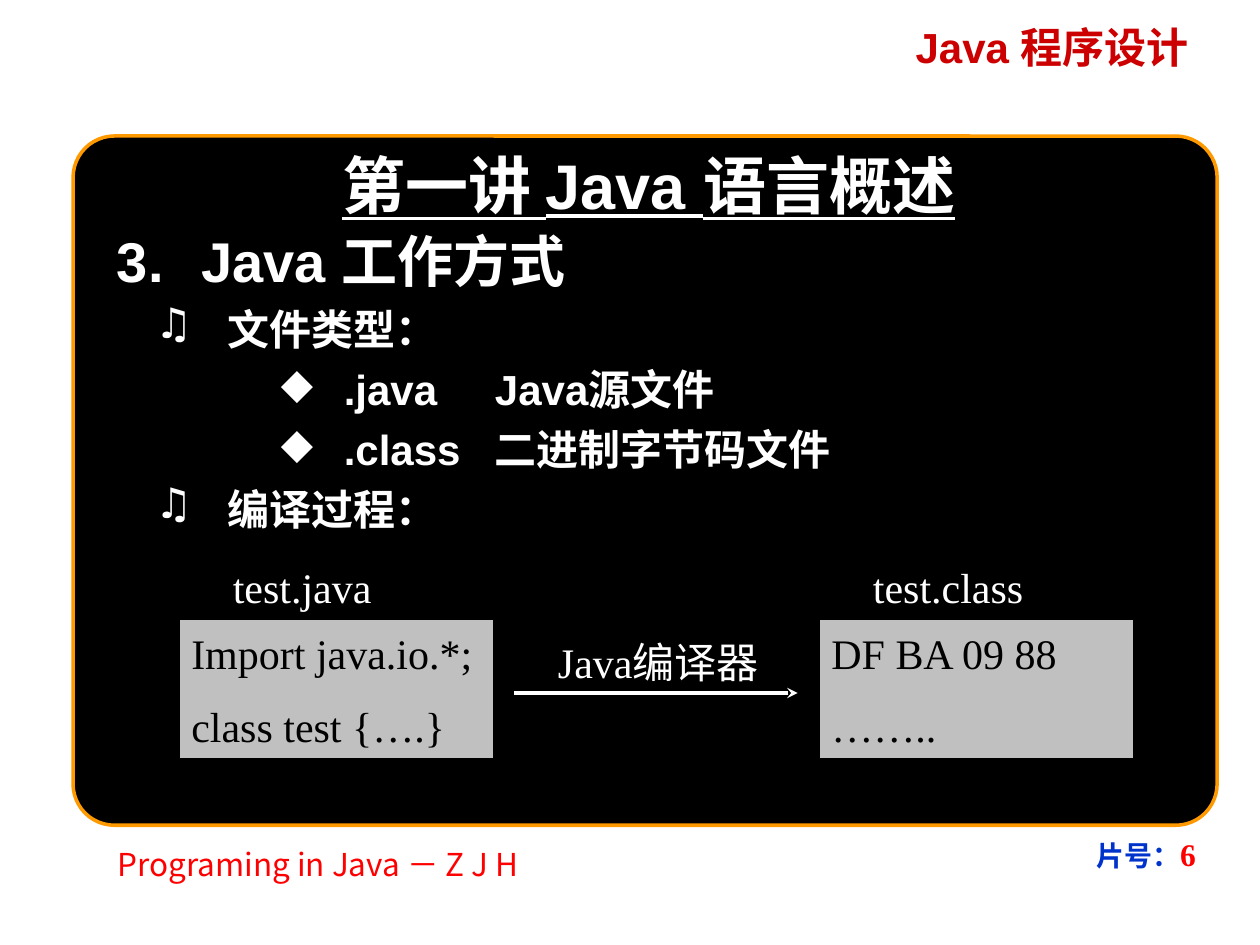
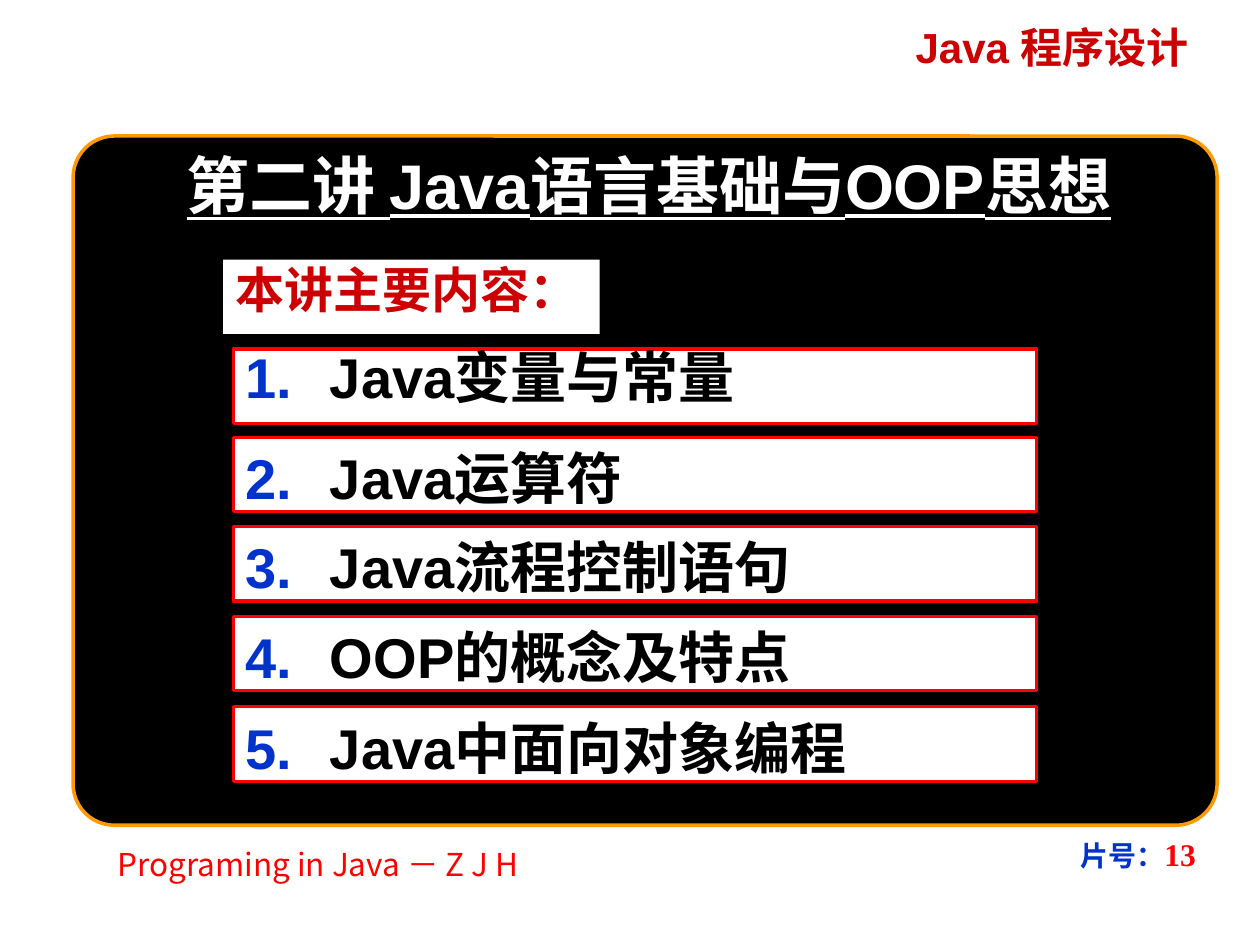
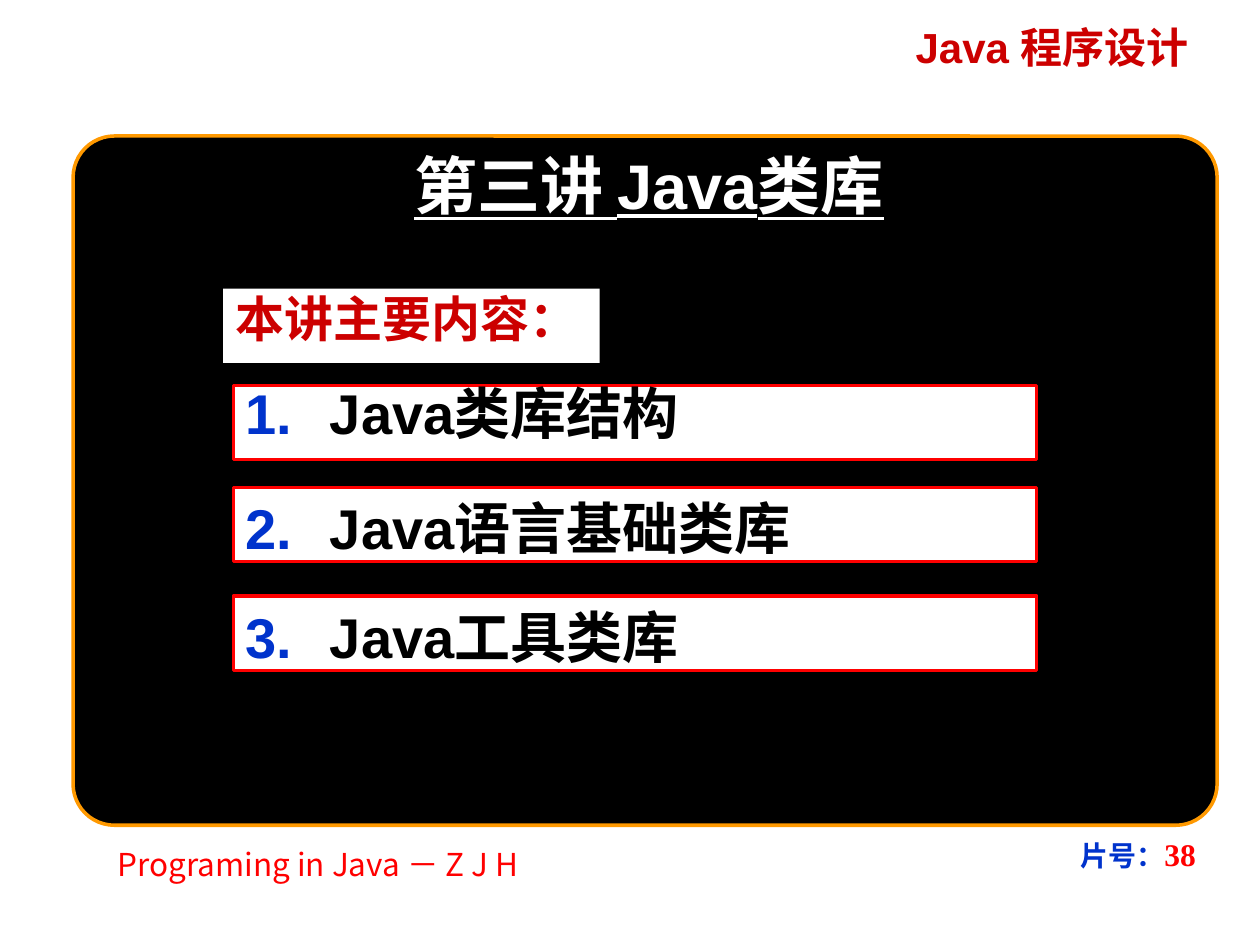
from pptx import Presentation
from pptx.dml.color import RGBColor
from pptx.enum import shapes as sh, text as tx
from pptx.oxml import ns, xmlchemy as xc
from pptx.util import Inches, Pt

# Colours, fonts and text formats
HUES = dict(white="FFFFFF", black="000000", red="FF0000", dark="CC0000",
            blue="0033CC", gold="FF9900", grey="C0C0C0")
HAN, SANS, SERIF = "Noto Sans CJK SC", "Arial", "Times New Roman"
STYLE = {
    "head": dict(size=24, name=SANS, hue="dark", bold=True),
    "foot": dict(size=18, name=HAN, hue="red"),
    "page": dict(size=16, name=SERIF, hue="blue", bold=True),
    "num": dict(size=18, name=SERIF, hue="red", bold=True),
    "title": dict(size=36, name=SANS, hue="white", bold=True, underline=True),
    "lead": dict(size=28, name=SANS, hue="dark", bold=True),
    "item": dict(size=32, name=SANS, hue="black", bold=True),
    "topic": dict(size=32, name=SANS, hue="white", bold=True),
    "point": dict(size=24, name=SANS, hue="white", bold=True),
    "code": dict(size=24, name=SERIF, hue="black"),
    "label": dict(size=24, name=SERIF, hue="white"),
}

# Content: style, text, bullet, left margin, hanging indent
WORK = [
    ("topic", "Java 工作方式", 3, 0.67, 0.67),
    ("point", "文件类型：", "♫", 0.88, 0.58),
    ("point", ".java\tJava源文件", "◆", 1.8, 0.5),
    ("point", ".class\t二进制字节码文件", "◆", 1.8, 0.5),
    ("point", "编译过程：", "♫", 0.88, 0.58),
]
# Label, label left, label width, box left, lines
FILES = [
    ("test.java", 1.75, 2, 1.42, ["Import java.io.*;", "class test {….}"]),
    ("test.class", 6.83, 2.75, 6.5, ["DF BA 09 88", "…….."]),
]
# Title, page, top of lead, items with their tops
PLANS = [
    ("第二讲 Java语言基础与OOP思想", 13, 2.06,
     [("Java变量与常量", 2.77), ("Java运算符", 3.47), ("Java流程控制语句", 4.18),
      ("OOP的概念及特点", 4.89), ("Java中面向对象编程", 5.61)]),
    ("第三讲 Java类库", 38, 2.29,
     [("Java类库结构", 3.06), ("Java语言基础类库", 3.87), ("Java工具类库", 4.73)]),
]


def rgb(hue):
    return RGBColor.from_string(HUES[hue])


def node(root, tag, **attrs):
    kid = xc.OxmlElement(tag)
    for key, val in attrs.items():
        kid.set(key, str(val))
    root.append(kid)
    return kid


def write(par, style, words):
    run = par.add_run()
    run.text = words
    for key, val in STYLE[style].items():
        if key == "hue":
            run.font.color.rgb = rgb(val)
        else:
            setattr(run.font, key, Pt(val) if key == "size" else val)
    node(run.font._element, "a:ea", typeface=HAN)


def mark(par, sign, hue, left, hang):
    """Hang a paragraph behind a number or a symbol."""
    props = par._p.get_or_add_pPr()
    props.set("marL", str(Inches(left)))
    props.set("indent", str(-Inches(hang)))
    node(node(props, "a:buClr"), "a:srgbClr", val=HUES[hue])
    if isinstance(sign, int):
        node(props, "a:buAutoNum", type="arabicPeriod", startAt=sign)
    else:
        node(props, "a:buChar", char=sign)


def paint(shape, fill, line, width=1):
    shape.shadow.inherit = False
    shape.fill.solid()
    shape.fill.fore_color.rgb = rgb(fill)
    if line:
        shape.line.color.rgb = rgb(line)
        shape.line.width = Pt(width)
    else:
        shape.line.fill.background()


def panel(slide, at, fill, line=None, width=1, kind="RECTANGLE"):
    shape = slide.shapes.add_shape(getattr(sh.MSO_SHAPE, kind), *map(Inches, at))
    paint(shape, fill, line, width)
    return shape


def fill_in(shape, rows, align="LEFT", anchor="TOP", wrap=True, gap=0):
    """Each row is a list of (style, words) runs."""
    frame = shape.text_frame
    frame.word_wrap = wrap
    frame.vertical_anchor = getattr(tx.MSO_ANCHOR, anchor)
    for i, row in enumerate(rows):
        par = frame.add_paragraph() if i else frame.paragraphs[0]
        par.alignment = getattr(tx.PP_ALIGN, align)
        if i:
            par.space_before = Pt(gap)
        for style, words in row:
            write(par, style, words)
    return frame.paragraphs


def label(slide, at, runs, **opts):
    box = slide.shapes.add_textbox(*map(Inches, at))
    return fill_in(box, [runs], **opts)


def base(deck, title, page):
    """Header, footer, black board, page number and title."""
    slide = deck.slides.add_slide(deck.slide_layouts[6])
    label(slide, (6.74, 0.12, 3.22, 0.5), [("head", "Java 程序设计")], align="CENTER")
    label(slide, (0.67, 6.66, 3.71, 0.25), [("foot", "Programing in Java － Z J H")],
          align="CENTER", wrap=False)
    board = panel(slide, (0.58, 1.08, 9.08, 5.47), "black", "gold", 2, "ROUNDED_RECTANGLE")
    board.adjustments[0] = 0.06
    label(slide, (8.42, 6.58, 1.17, 0.5), [("page", "片号："), ("num", str(page))],
          align="RIGHT")
    label(slide, (0.9, 1.11, 8.5, 0.58), [("title", title)], align="CENTER")
    return slide


def process(deck):
    slide = base(deck, "第一讲 Java 语言概述", 6)
    body = slide.shapes.add_textbox(*map(Inches, (0.83, 1.75, 8.58, 4.67)))
    pars = fill_in(body, [[row[:2]] for row in WORK], gap=5.5)
    for par, (_, _, sign, left, hang) in zip(pars, WORK):
        mark(par, sign, "white", left, hang)

    # Compiler arrow
    ends = map(Inches, (4.08, 5.5, 6.33, 5.5))
    arrow = slide.shapes.add_connector(sh.MSO_CONNECTOR.STRAIGHT, *ends)
    arrow.line.color.rgb = rgb("white")
    arrow.line.width = Pt(2)
    props = arrow._element.spPr
    node(props.find(ns.qn("a:ln")), "a:tailEnd", type="stealth")
    node(props, "a:effectLst")
    label(slide, (4.33, 5, 2.25, 0.5), [("label", "Java编译器")], anchor="MIDDLE")

    # Source and compiled files
    for name, left, width, edge, lines in FILES:
        box = panel(slide, (edge, 4.91, 2.5, 1.12), "grey", "black", 1.5)
        fill_in(box, [[("code", line)] for line in lines], anchor="MIDDLE", gap=13)
        label(slide, (left, 4.41, width, 0.5), [("label", name)], anchor="MIDDLE")


def agenda(deck, title, page, top, items):
    slide = base(deck, title, page)
    for num, (words, y) in enumerate(items, 1):
        box = panel(slide, (1.85, y, 6.38, 0.59), "white", "red", 1.75)
        par = fill_in(box, [[("item", words)]])[0]
        mark(par, num, "blue", 0.67, 0.67)
        if num == 1:
            par.line_spacing = 0.8
    lead = panel(slide, (1.77, top, 2.99, 0.59), "white")
    fill_in(lead, [[("lead", "本讲主要内容：")]])[0].line_spacing = 0.9


def main():
    deck = Presentation()
    deck.slide_width, deck.slide_height = Inches(10), Inches(7.5)
    process(deck)
    for plan in PLANS:
        agenda(deck, *plan)
    deck.save("out.pptx")


if __name__ == "__main__":
    main()
